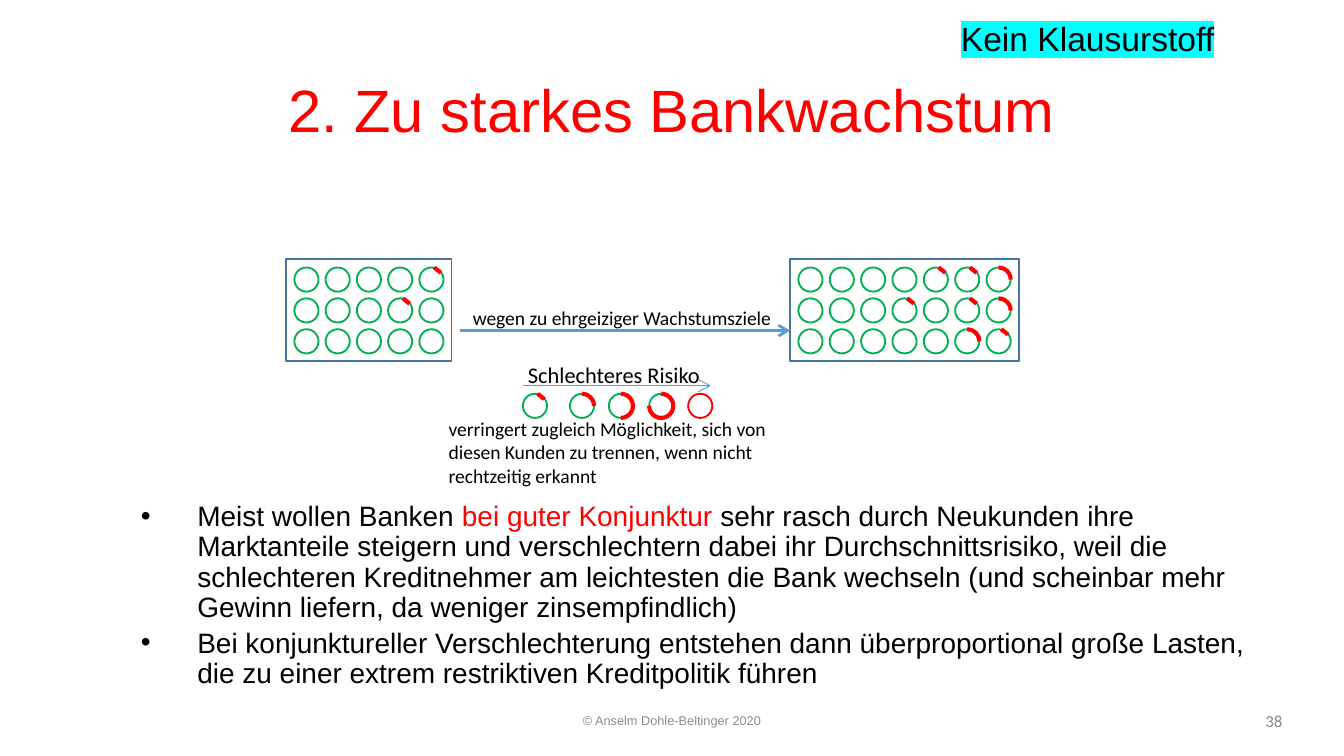
from dataclasses import dataclass

from lxml import etree
from pptx import Presentation
from pptx.dml.color import RGBColor
from pptx.enum import shapes, text
from pptx.oxml import ns
from pptx.util import Inches, Pt


@dataclass(frozen=True)
class Theme:
    """Colours, fonts and type sizes of the slide."""
    black: str = "000000"
    red: str = "FF0000"
    green: str = "00B050"
    frame: str = "43739E"
    arrow: str = "5B9BD5"
    number: str = "898989"
    footer: str = "8C8C8C"
    marker: str = "00FFFF"
    sans: str = "Arial"
    label: str = "Calibri"
    title_pt: float = 32
    tag_pt: float = 18
    body_pt: float = 15
    scale_pt: float = 12
    label_pt: float = 10.5
    number_pt: float = 9
    footer_pt: float = 6.8


T = Theme()
DOT = 0.18
DOT_INSET = 0.06
ARC_START = 270
ARC_ENDS = {"quarter": 0, "half": 90, "most": 180}
ARC_UNIT = 0.6
RISKS = {".": "none", "t": "slight", "q": "quarter"}
BULLETS = [
    [("Meist wollen Banken ", T.black), ("bei guter Konjunktur", T.red),
     (" sehr rasch durch Neukunden ihre Marktanteile steigern und verschlechtern "
      "dabei ihr Durchschnittsrisiko, weil die schlechteren Kreditnehmer am "
      "leichtesten die Bank wechseln (und scheinbar mehr Gewinn liefern, da "
      "weniger zinsempfindlich)", T.black)],
    [("Bei konjunktureller Verschlechterung entstehen dann überproportional große "
      "Lasten, die zu einer extrem restriktiven Kreditpolitik führen", T.black)],
]


def add_xml(parent, tag, **attrs):
    """Append a DrawingML element and return it."""
    return etree.SubElement(parent, ns.qn(tag), attrs)


def style_run(r, size, font, color):
    """Set size, typeface and colour of a run."""
    r.font.size = Pt(size)
    r.font.name = font
    r.font.color.rgb = RGBColor.from_string(color)


def outline(sp, color, width):
    """Give a shape a plain outline without fill or shadow."""
    sp.shadow.inherit = False
    sp.fill.background()
    sp.line.color.rgb = RGBColor.from_string(color)
    sp.line.width = Pt(width)


def add_preset(s, kind, x, y, w, h, color, width=1):
    """Add an outlined preset shape."""
    sp = s.shapes.add_shape(kind, Inches(x), Inches(y), Inches(w), Inches(h))
    outline(sp, color, width)
    return sp


def add_textbox(s, x, y, w, h):
    """Add a wrapping text box and return its frame."""
    tf = s.shapes.add_textbox(Inches(x), Inches(y), Inches(w), Inches(h)).text_frame
    tf.word_wrap = True
    return tf


def add_label(s, box, words, size, font, color=T.black, align=text.PP_ALIGN.LEFT,
              anchor=text.MSO_ANCHOR.TOP):
    """Add a one-paragraph label and return its frame."""
    tf = add_textbox(s, *box)
    tf.text = words
    tf.vertical_anchor = anchor
    p = tf.paragraphs[0]
    p.alignment = align
    style_run(p.runs[0], size, font, color)
    return tf


def add_arrow(s, x1, x2, y, width):
    """Add a horizontal arrow."""
    c = s.shapes.add_connector(shapes.MSO_CONNECTOR.STRAIGHT,
                               Inches(x1), Inches(y), Inches(x2), Inches(y))
    c.line.color.rgb = RGBColor.from_string(T.arrow)
    c.line.width = Pt(width)
    add_xml(c.line._get_or_add_ln(), "a:tailEnd", type="arrow")
    add_xml(c._element.spPr, "a:effectLst")


def add_customer(s, x, y, risk):
    """Draw a customer as a ring with a red share for the risk."""
    ring = T.red if risk == "full" else T.green
    add_preset(s, shapes.MSO_SHAPE.OVAL, x, y, DOT, DOT, ring)
    if risk == "slight":
        fb = s.shapes.build_freeform(Inches(x + 0.11), Inches(y))
        fb.add_line_segments([(Inches(x + 0.16), Inches(y + 0.04))], close=False)
        outline(fb.convert_to_shape(), T.red, 2.25)
    elif risk in ARC_ENDS:
        arc = add_preset(s, shapes.MSO_SHAPE.ARC, x, y, DOT, DOT, T.red, 2.25)
        arc.adjustments[0] = ARC_START * ARC_UNIT
        arc.adjustments[1] = ARC_ENDS[risk] * ARC_UNIT


def add_portfolio(s, x, y, w, h, rows):
    """Draw a framed grid of customers."""
    add_preset(s, shapes.MSO_SHAPE.RECTANGLE, x, y, w, h, T.frame)
    step_x = (w - DOT - 2 * DOT_INSET) / (len(rows[0]) - 1)
    step_y = (h - DOT - 2 * DOT_INSET) / (len(rows) - 1)
    for j, row in enumerate(rows):
        for i, code in enumerate(row):
            add_customer(s, x + DOT_INSET + i * step_x,
                         y + DOT_INSET + j * step_y, RISKS[code])


def add_growth(s, x, y, w, h):
    """Draw the growth arrow with its reason above it."""
    add_label(s, (x, y, w, h), "wegen zu ehrgeiziger Wachstumsziele",
              T.label_pt, T.label)
    add_arrow(s, x, x + w, y + 0.23, 1.5)


def add_risk_scale(s, x, y, w, h):
    """Draw the scale of worsening risk with its note."""
    add_label(s, (x + 0.59, y, 1.52, 0.3), "Schlechteres Risiko", T.scale_pt, T.label)
    add_arrow(s, x + 0.65, x + 2.05, y + 0.23, 0.5)
    steps = {"slight": 0.65, "quarter": 1, "half": 1.29, "most": 1.59, "full": 1.88}
    for risk, dx in steps.items():
        add_customer(s, x + dx, y + 0.29, risk)
    add_label(s, (x, y + 0.41, w, h - 0.41),
              "verringert zugleich Möglichkeit, sich von diesen Kunden zu trennen, "
              "wenn nicht rechtzeitig erkannt", T.label_pt, T.label)


def add_body(s, x, y, w, h):
    """Add the bulleted text below the diagram."""
    tf = add_textbox(s, x, y, w, h)
    tf.margin_top = Inches(1.81)
    for i, parts in enumerate(BULLETS):
        p = tf.paragraphs[0] if i == 0 else tf.add_paragraph()
        p.line_spacing = 0.9
        p.space_before = Pt(2.8)
        pPr = p._p.get_or_add_pPr()
        pPr.set("marL", str(Inches(0.75)))
        pPr.set("indent", str(-Inches(0.42)))
        add_xml(pPr, "a:buFont", typeface=T.sans)
        add_xml(pPr, "a:buChar", char="•")
        for words, color in parts:
            r = p.add_run()
            r.text = words
            style_run(r, T.body_pt, T.sans, color)


def add_tag(s, x, y, w, h):
    """Add the highlighted exam remark."""
    tf = add_label(s, (x, y, w, h), "Kein Klausurstoff", T.tag_pt, T.sans)
    tf.margin_left = tf.margin_right = tf.margin_top = tf.margin_bottom = 0
    rPr = tf.paragraphs[0].runs[0].font._element
    mark = add_xml(rPr, "a:highlight")
    add_xml(mark, "a:srgbClr", val=T.marker)
    rPr.find(ns.qn("a:solidFill")).addnext(mark)


def add_headings(s):
    """Add the title, the footer and the slide number."""
    middle, center = text.MSO_ANCHOR.MIDDLE, text.PP_ALIGN.CENTER
    tf = add_label(s, (0.69, 0.3, 8.62, 1.09), "2. Zu starkes Bankwachstum",
                   T.title_pt, T.sans, T.red, center, middle)
    tf.paragraphs[0].line_spacing = 0.9
    add_label(s, (3.31, 5.21, 3.38, 0.3), "© Anselm Dohle-Beltinger 2020",
              T.footer_pt, T.sans, T.footer, center, middle)
    add_label(s, (9.3, 5.21, 0.34, 0.3), "38", T.number_pt, T.label, T.number,
              text.PP_ALIGN.RIGHT, middle)


def main():
    """Build and save the slide."""
    prs = Presentation()
    prs.slide_width = Inches(10)
    prs.slide_height = prs.slide_width * 9 // 16
    s = prs.slides.add_slide(prs.slide_layouts[6])
    add_body(s, 0.62, 1.93, 8.85, 3.63)
    add_headings(s)
    add_portfolio(s, 2.13, 1.93, 1.23, 0.76, ["....t", "...t.", "....."])
    add_portfolio(s, 5.88, 1.93, 1.7, 0.76, ["....ttq", "...t.tq", ".....qt"])
    add_growth(s, 3.42, 2.23, 2.46, 0.28)
    add_risk_scale(s, 3.24, 2.64, 2.7, 1.04)
    add_tag(s, 7.15, 0.13, 2.16, 0.3)
    prs.save("out.pptx")


if __name__ == "__main__":
    main()
